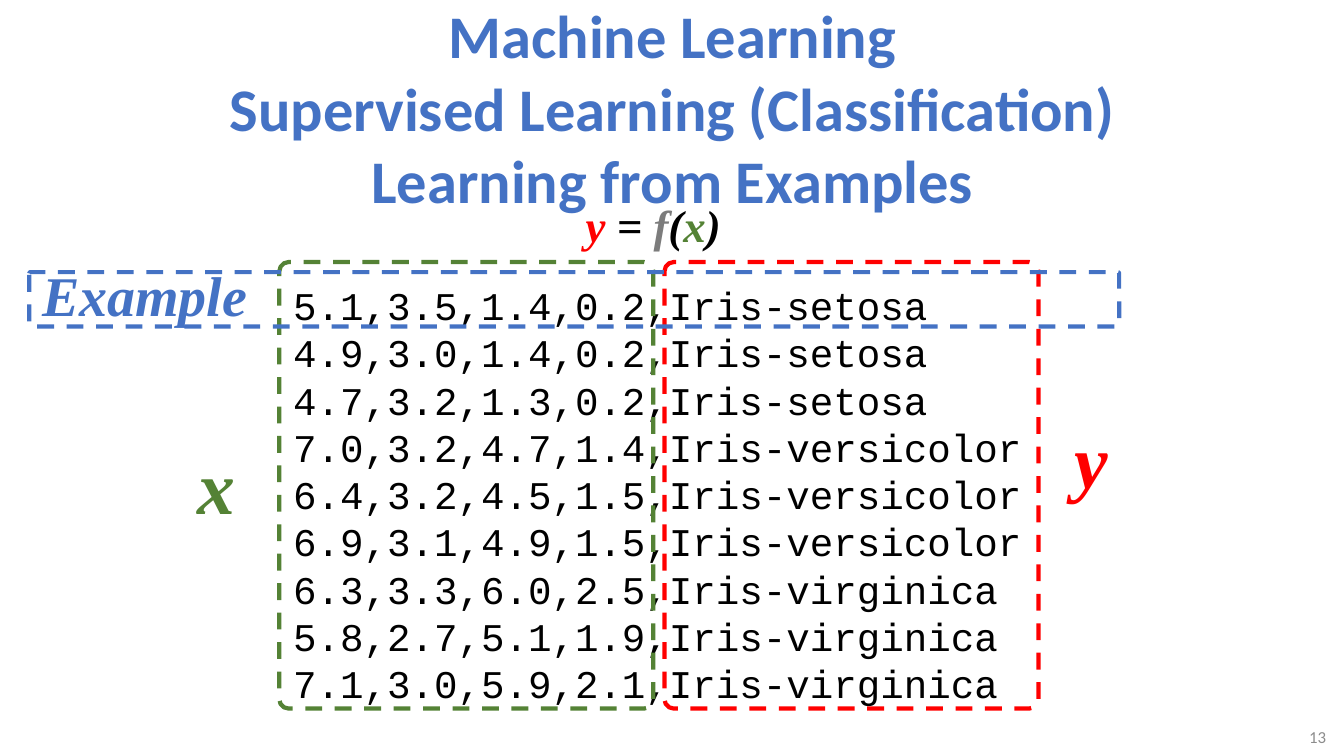
from pptx import Presentation
from pptx.dml.color import RGBColor
from pptx.enum.dml import MSO_LINE
from pptx.enum.shapes import MSO_SHAPE
from pptx.enum.text import MSO_ANCHOR, PP_ALIGN
from pptx.util import Inches, Pt

BLUE = RGBColor(0x44, 0x72, 0xC4)
GREEN = RGBColor(0x54, 0x82, 0x35)
RED = RGBColor(0xFF, 0x00, 0x00)
BLACK = RGBColor(0x00, 0x00, 0x00)
GRAY = RGBColor(0x7C, 0x7C, 0x7C)
LIGHT_GRAY = RGBColor(0x8C, 0x8C, 0x8C)

prs = Presentation()
prs.slide_width, prs.slide_height = Inches(13.33), Inches(7.5)
s = prs.slides.add_slide(prs.slide_layouts[5])


def style(r, font, size, color, bold=False, italic=False):
    r.font.name, r.font.size = font, Pt(size)
    r.font.color.rgb = color
    r.font.bold, r.font.italic = bold, italic


def add_text(x, y, w, h, runs, font, size, bold=False, italic=False, wrap=False):
    tf = s.shapes.add_textbox(Inches(x), Inches(y), Inches(w), Inches(h)).text_frame
    tf.word_wrap = wrap
    for text, color in runs:
        r = tf.paragraphs[0].add_run()
        r.text = text
        style(r, font, size, color, bold, italic)
    return tf


title = s.shapes.title
title.left, title.top = Inches(1.94), Inches(0)
title.width, title.height = Inches(9.46), Inches(2.12)
tf = title.text_frame
tf.text = "Machine Learning\vSupervised Learning (Classification)\vLearning from Examples"
tf.vertical_anchor = MSO_ANCHOR.MIDDLE
p = tf.paragraphs[0]
p.alignment = PP_ALIGN.CENTER
for r in p.runs:
    style(r, "Calibri", 43.2, BLUE, bold=True)

tf = add_text(12.2, 7.18, 1.05, 0.26, [("13", LIGHT_GRAY)], "Calibri", 12, wrap=True)
tf.vertical_anchor = MSO_ANCHOR.MIDDLE
tf.paragraphs[0].alignment = PP_ALIGN.RIGHT

iris_rows = [
    "5.1,3.5,1.4,0.2,Iris-setosa",
    "4.9,3.0,1.4,0.2,Iris-setosa",
    "4.7,3.2,1.3,0.2,Iris-setosa",
    "7.0,3.2,4.7,1.4,Iris-versicolor",
    "6.4,3.2,4.5,1.5,Iris-versicolor",
    "6.9,3.1,4.9,1.5,Iris-versicolor",
    "6.3,3.3,6.0,2.5,Iris-virginica",
    "5.8,2.7,5.1,1.9,Iris-virginica",
    "7.1,3.0,5.9,2.1,Iris-virginica",
]
tf = add_text(2.81, 2.74, 8.43, 4.34, [], "Courier New", 28, wrap=True)
tf.text = "\n".join(iris_rows)
for p in tf.paragraphs:
    p.line_spacing = Pt(33.75)
    style(p.runs[0], "Courier New", 28, BLACK)

formula = [("y", RED), (" = ", BLACK), ("f", GRAY), ("(", BLACK), ("x", GREEN), (")", BLACK)]
labels = [
    (1.86, 4.3, 0.58, 1.01, [("x", GREEN)], 54),
    (10.56, 4.05, 0.54, 1.01, [("y", RED)], 54),
    (5.71, 1.91, 1.59, 0.64, formula, 32),
    (0.32, 2.54, 2.26, 0.77, [("Example", BLUE)], 40),
]
for x, y, w, h, runs, size in labels:
    add_text(x, y, w, h, runs, "Times New Roman", size, bold=True, italic=True)

frames = [
    (2.77, 2.6, 3.71, 4.43, GREEN),
    (6.59, 2.6, 3.71, 4.43, RED),
    (0.29, 2.7, 10.81, 0.54, BLUE),
]
for x, y, w, h, color in frames:
    sp = s.shapes.add_shape(MSO_SHAPE.ROUNDED_RECTANGLE, Inches(x), Inches(y), Inches(w), Inches(h))
    sp.adjustments[0] = 0.025
    sp.shadow.inherit = False
    sp.fill.background()
    sp.line.color.rgb = color
    sp.line.width = Pt(3)
    sp.line.dash_style = MSO_LINE.DASH

prs.save("out.pptx")
